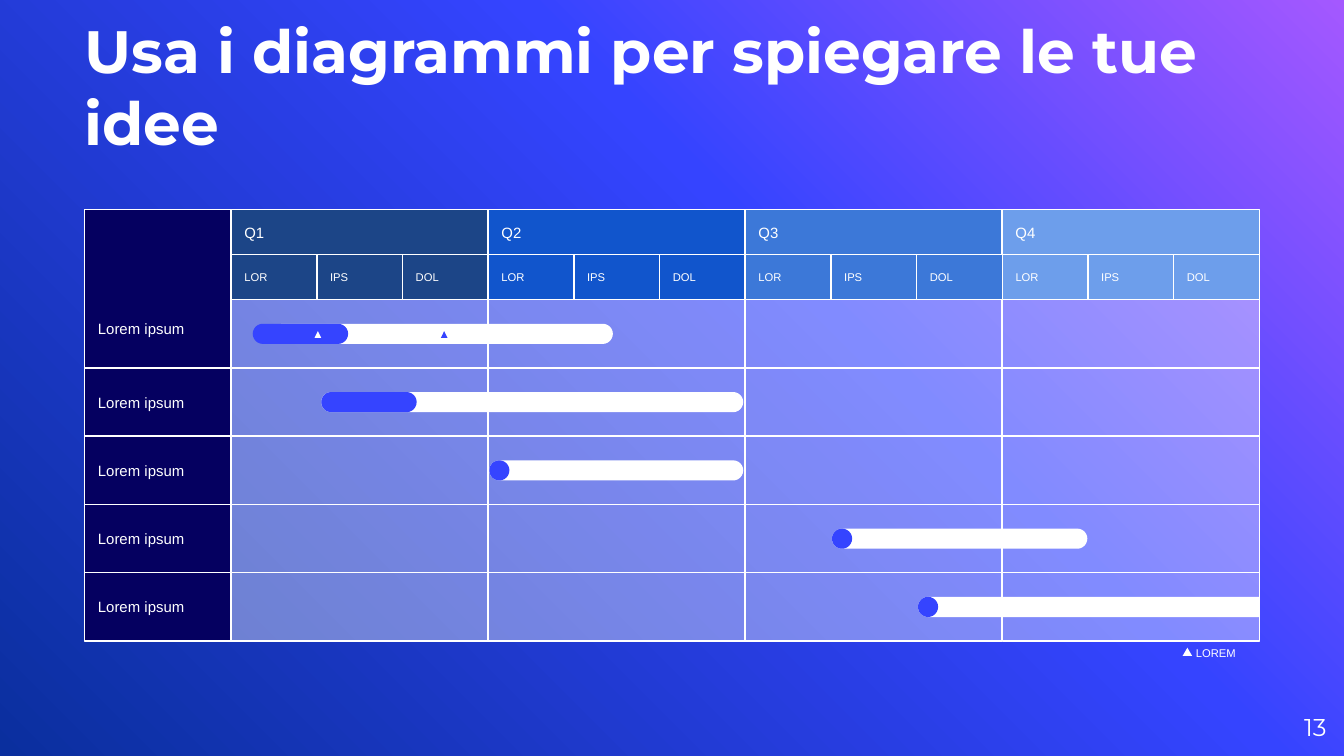
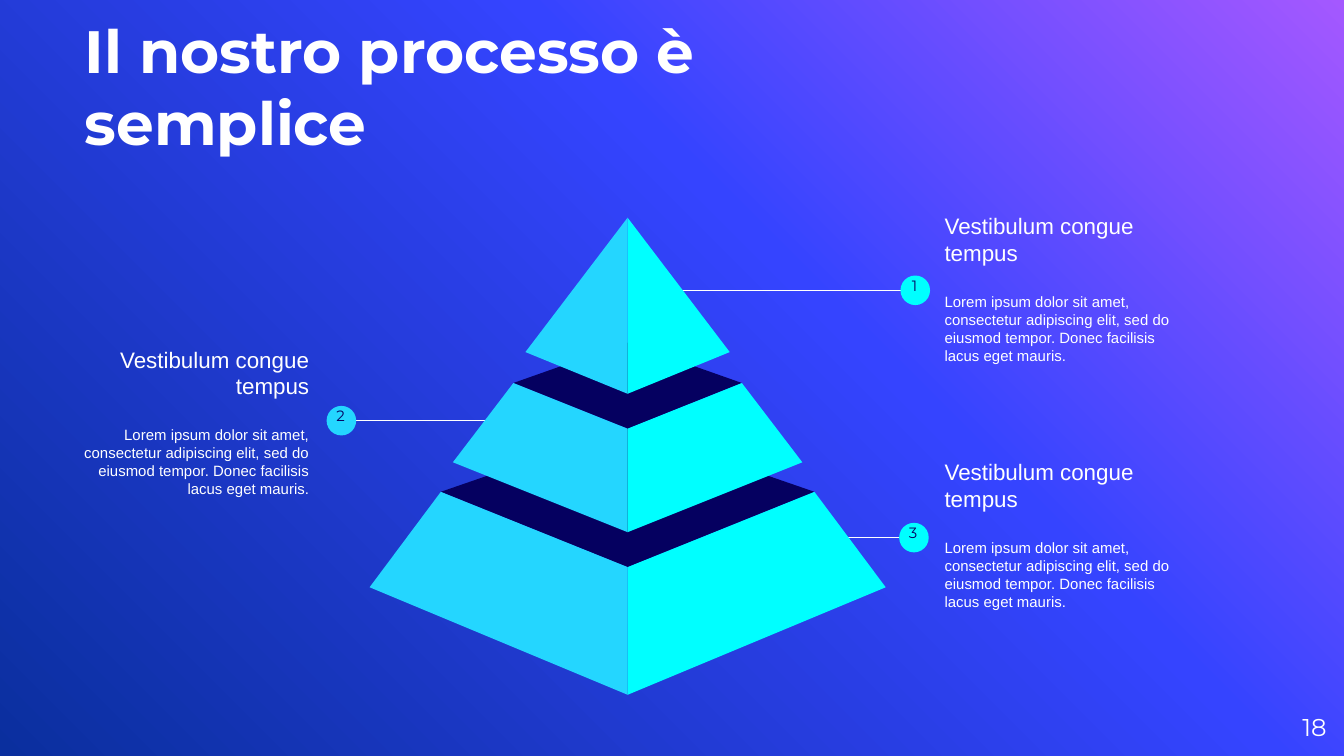
from collections import namedtuple
from copy import deepcopy

from lxml import etree
from pptx import Presentation
from pptx.dml.color import RGBColor
from pptx.enum.shapes import MSO_CONNECTOR, MSO_SHAPE
from pptx.enum.text import MSO_ANCHOR, PP_ALIGN
from pptx.oxml.ns import qn
from pptx.util import Inches, Pt

RECT = MSO_SHAPE.RECTANGLE
OVAL = MSO_SHAPE.OVAL
TRIANGLE = MSO_SHAPE.ISOSCELES_TRIANGLE
BAR = MSO_SHAPE.ROUND_2_SAME_RECTANGLE
STRAIGHT = MSO_CONNECTOR.STRAIGHT
TOP, MIDDLE, BOTTOM = MSO_ANCHOR.TOP, MSO_ANCHOR.MIDDLE, MSO_ANCHOR.BOTTOM
LEFT, CENTER, RIGHT = PP_ALIGN.LEFT, PP_ALIGN.CENTER, PP_ALIGN.RIGHT

COLORS = {
    "white": "FFFFFF",
    "violet": "A458FF",
    "blue": "3544FF",
    "deep": "0A2F9E",
    "navy": "050060",
    "sky": "24D6FF",
    "cyan": "00FFFF",
    "q1": "1C4587",
    "q2": "1155CC",
    "q3": "3C78D8",
    "q4": "6D9EEB",
}
BACKGROUND = [(0, "violet"), (0.39, "blue"), (1, "deep")]
HEADING_FONT, BODY_FONT = "Montserrat", "Arial"

Box = namedtuple("Box", "left top width height")

MONTHS = ["LOR", "IPS", "DOL"]
TASKS = ["Lorem ipsum"] * 5
BARS = [
    (0, 2.03, 2.53, "white", 0.5),
    (0, 1.88, 0.71, "blue", 0.5),
    (1, 2.39, 3.14, "white", 0.5),
    (1, 2.39, 0.71, "blue", 0.5),
    (2, 3.64, 1.89, "white", 0.5),
    (2, 3.64, 0.15, "blue", 0.5),
    (3, 6.19, 1.9, "white", 0.5),
    (3, 6.19, 0.15, "blue", 0.5),
    (4, 6.83, 2.54, "white", 0),
    (4, 6.83, 0.15, "blue", 0.5),
]
MILESTONES = [(2.34, "white"), (3.28, "blue")]

CALLOUT_TITLE = "Vestibulum congue tempus"
CALLOUT_BODY = (
    "Lorem ipsum dolor sit amet, consectetur adipiscing elit, sed do "
    "eiusmod tempor. Donec facilisis lacus eget mauris."
)

Tier = namedtuple("Tier", "shoulder foot front_top front_bottom lid_back")
TIERS = [
    Tier((1.39, 2.04), (1.92, 2.75), 2.6, 3.55, 1.56),
    Tier((0.85, 1.23), (1.3, 1.82), 1.57, 2.34, 0.93),
    Tier((0, 0), (0.76, 1), 0, 1.31, None),
]


def rgb(color):
    return RGBColor.from_string(COLORS[color])


def inches(box):
    return [Inches(length) for length in box]


def paint(shape, color, outlined=False, opacity=None):
    shape.shadow.inherit = False
    shape.fill.solid()
    shape.fill.fore_color.rgb = rgb(color)
    if opacity is not None:
        tint = shape._element.spPr.find(".//" + qn("a:srgbClr"))
        etree.SubElement(tint, qn("a:alpha")).set("val", str(opacity * 1000))
    if outlined:
        shape.line.color.rgb = rgb("white")
        shape.line.width = Pt(0.75)
    else:
        shape.line.fill.background()


def add_figure(shapes, kind, box, color, **style):
    shape = shapes.add_shape(kind, *inches(box))
    paint(shape, color, **style)
    return shape


def write(shape, lines, size, font=BODY_FONT, color="white", align=LEFT,
          anchor=MIDDLE, inset=0.1, bold=False):
    frame = shape.text_frame
    frame.word_wrap = True
    frame.vertical_anchor = anchor
    frame.margin_left = frame.margin_right = Inches(inset)
    frame.margin_top = frame.margin_bottom = Inches(inset)
    frame.text = lines
    for para in frame.paragraphs:
        para.alignment = align
        for span in para.runs:
            span.font.size = Pt(size)
            span.font.name = font
            span.font.bold = bold
            span.font.color.rgb = rgb(color)
    return frame


def add_text(shapes, box, lines, size, **style):
    return write(shapes.add_textbox(*inches(box)), lines, size, **style)


def add_page(deck, title, title_width, number):
    page = deck.slides.add_slide(deck.slide_layouts[6])
    fill = page.background.fill
    fill.gradient()
    fill.gradient_angle = 225
    stop_list = page.element.find(".//" + qn("a:gsLst"))
    stop_list.append(deepcopy(stop_list[0]))
    for stop, (position, color) in zip(fill.gradient_stops, BACKGROUND):
        stop.position = position
        stop.color.rgb = rgb(color)
    add_text(page.shapes, Box(0.63, 0.23, title_width, 0.94), title, 32,
             font=HEADING_FONT, anchor=BOTTOM, inset=0, bold=True)
    add_text(page.shapes, Box(9.27, 5.19, 0.6, 0.43), number, 13,
             font=HEADING_FONT, align=RIGHT, inset=0)
    return page


def add_cell(page, box, text, size, color):
    cell = add_figure(page.shapes, RECT, box, color, outlined=True)
    return write(cell, text, size)


def add_quarters(page, box):
    width, height = box.width / 4, box.height / 2
    for quarter in range(4):
        left = box.left + quarter * width
        color = f"q{quarter + 1}"
        add_cell(page, Box(left, box.top, width, height), f"Q{quarter + 1}", 8, color)
        for index, month in enumerate(MONTHS):
            month_box = Box(left + index * width / 3, box.top + height, width / 3, height)
            add_cell(page, month_box, month, 6, color)


def add_grid(page, box):
    width, height = box.width / 4, box.height / len(TASKS)
    for row in range(len(TASKS)):
        for column in range(4):
            cell_box = Box(box.left + column * width, box.top + row * height, width, height)
            add_figure(page.shapes, RECT, cell_box, "white", outlined=True, opacity=38)


def add_tasks(page, box, header_height):
    height = box.height / len(TASKS)
    for row, task in enumerate(TASKS):
        extra = 0 if row else header_height
        cell_box = Box(box.left, box.top + row * height - extra, box.width, height + extra)
        frame = add_cell(page, cell_box, task, 8, "navy")
        if extra:
            frame.vertical_anchor = BOTTOM
            frame.margin_bottom = Inches(0.23)


def add_bars(page, box):
    height, thickness = box.height / len(TASKS), 0.15
    for row, left, length, color, end_radius in BARS:
        center = box.top + (row + 0.5) * height
        bar_box = Box(left + (length - thickness) / 2, center - length / 2, thickness, length)
        bar = add_figure(page.shapes, BAR, bar_box, color)
        bar.rotation = 90
        bar.adjustments[0] = end_radius
        bar.adjustments[1] = 0.5
    for left, color in MILESTONES:
        mark_box = Box(left, box.top + height / 2 - 0.02, 0.05, 0.05)
        add_figure(page.shapes, TRIANGLE, mark_box, color)


def add_legend(page, box):
    add_text(page.shapes, box, "LOREM", 6)
    mark_box = Box(box.left, box.top + 0.02, 0.07, 0.06)
    add_figure(page.shapes, TRIANGLE, mark_box, "white")


def build_gantt(deck):
    page = add_page(deck, "Usa i diagrammi per spiegare le tue idee", 8.9, "13")
    header = Box(1.72, 1.56, 7.65, 0.67)
    body = Box(header.left, header.top + header.height, header.width, 2.54)
    add_grid(page, body)
    add_quarters(page, header)
    add_tasks(page, Box(0.63, body.top, 1.09, body.height), header.height)
    add_bars(page, body)
    add_legend(page, Box(8.8, 4.8, 0.56, 0.11))


def add_callout(page, box, number, edge, color, dot_offset, align=LEFT):
    shapes = page.shapes.add_group_shape().shapes
    diameter = 0.22
    dot_left = box.left + dot_offset[0]
    dot_top = box.top + dot_offset[1]
    level = Inches(dot_top + diameter / 2)
    line = shapes.add_connector(
        STRAIGHT, Inches(edge), level, Inches(dot_left + diameter / 2), level)
    line.line.color.rgb = rgb("white")
    line.line.width = Pt(0.75)
    etree.SubElement(line._element.spPr, qn("a:effectLst"))

    frame = add_text(shapes, box, f"{CALLOUT_TITLE}\n{CALLOUT_BODY}", 8, align=align)
    heading, body = frame.paragraphs
    heading.runs[0].font.size = Pt(12)
    body.space_before = Pt(14)
    body.space_after = Pt(16)

    add_figure(shapes, OVAL, Box(dot_left, dot_top, diameter, diameter), color)
    number_box = Box(dot_left - 0.03, dot_top - 0.06, 0.27, 0.34)
    add_text(shapes, number_box, number, 8, font=HEADING_FONT, color="navy",
             align=CENTER, anchor=TOP)


def add_face(shapes, points, color):
    corners = [(Inches(x), Inches(y)) for x, y in points]
    builder = shapes.build_freeform(*corners[0], scale=1.0)
    builder.add_line_segments(corners[1:], close=True)
    paint(builder.convert_to_shape(), color)


def add_pyramid(page, box):
    shapes = page.shapes.add_group_shape().shapes
    axis = box.left + box.width / 2

    def place(points):
        return [(axis + x, box.top + y) for x, y in points]

    for tier in TIERS:
        (shoulder_x, shoulder_y), (foot_x, foot_y) = tier.shoulder, tier.foot
        if tier.lid_back is not None:
            lid = [(-shoulder_x, shoulder_y), (0, tier.front_top),
                   (shoulder_x, shoulder_y), (0, tier.lid_back)]
            add_face(shapes, place(lid), "navy")
        for side, color in ((-1, "sky"), (1, "cyan")):
            face = [(side * shoulder_x, shoulder_y), (side * foot_x, foot_y),
                    (0, tier.front_bottom)]
            if tier.front_top != shoulder_y:
                face.append((0, tier.front_top))
            add_face(shapes, place(face), color)


def build_process(deck):
    page = add_page(deck, "Il nostro processo è semplice", 6.58, "18")
    size = (2.04, 1.51)
    add_callout(page, Box(6.93, 3.22, *size), "3", 6.27, "cyan", (-0.24, 0.67))
    add_callout(page, Box(0.36, 2.38, *size), "2", 3.64, "sky", (2.07, 0.64), RIGHT)
    add_callout(page, Box(6.93, 1.39, *size), "1", 5.03, "cyan", (-0.23, 0.66))
    add_pyramid(page, Box(2.75, 1.62, 3.84, 3.55))


def main():
    deck = Presentation()
    deck.slide_width, deck.slide_height = Inches(10), Inches(10 * 9 / 16)
    build_gantt(deck)
    build_process(deck)
    deck.save("out.pptx")


if __name__ == "__main__":
    main()
